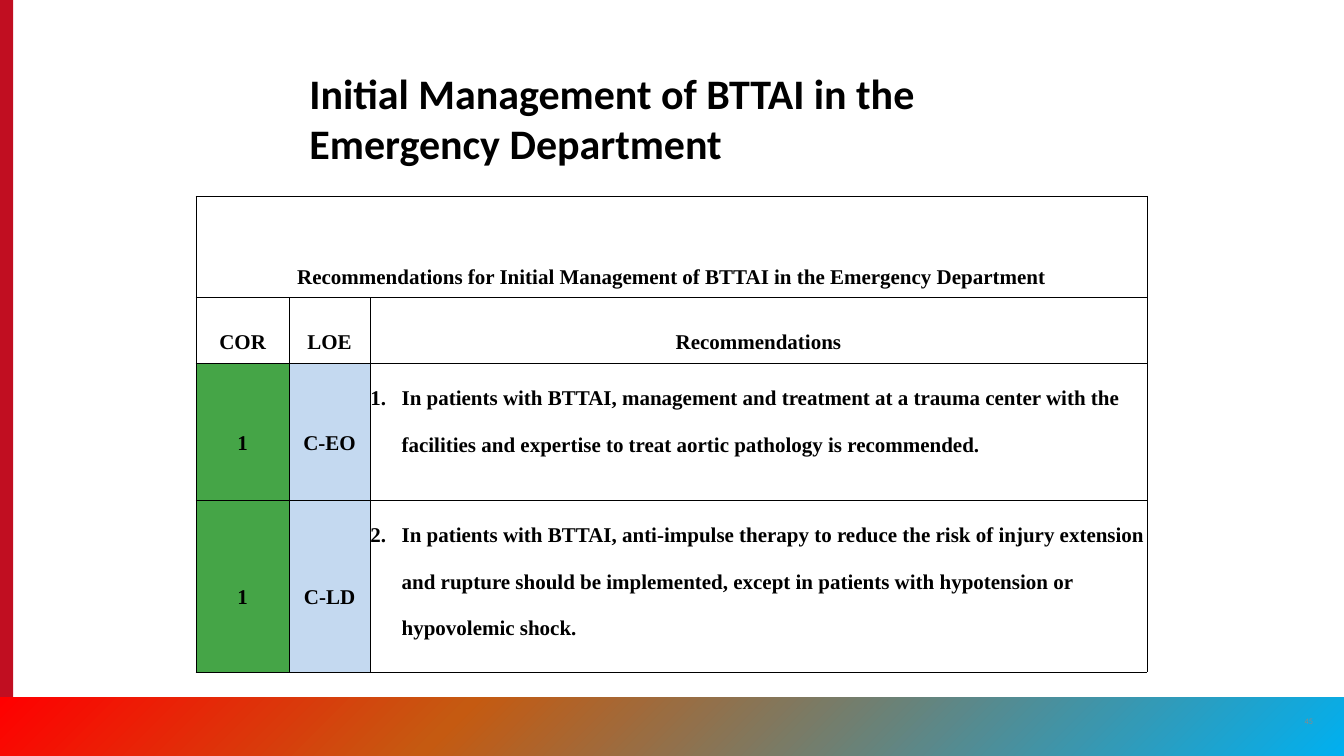
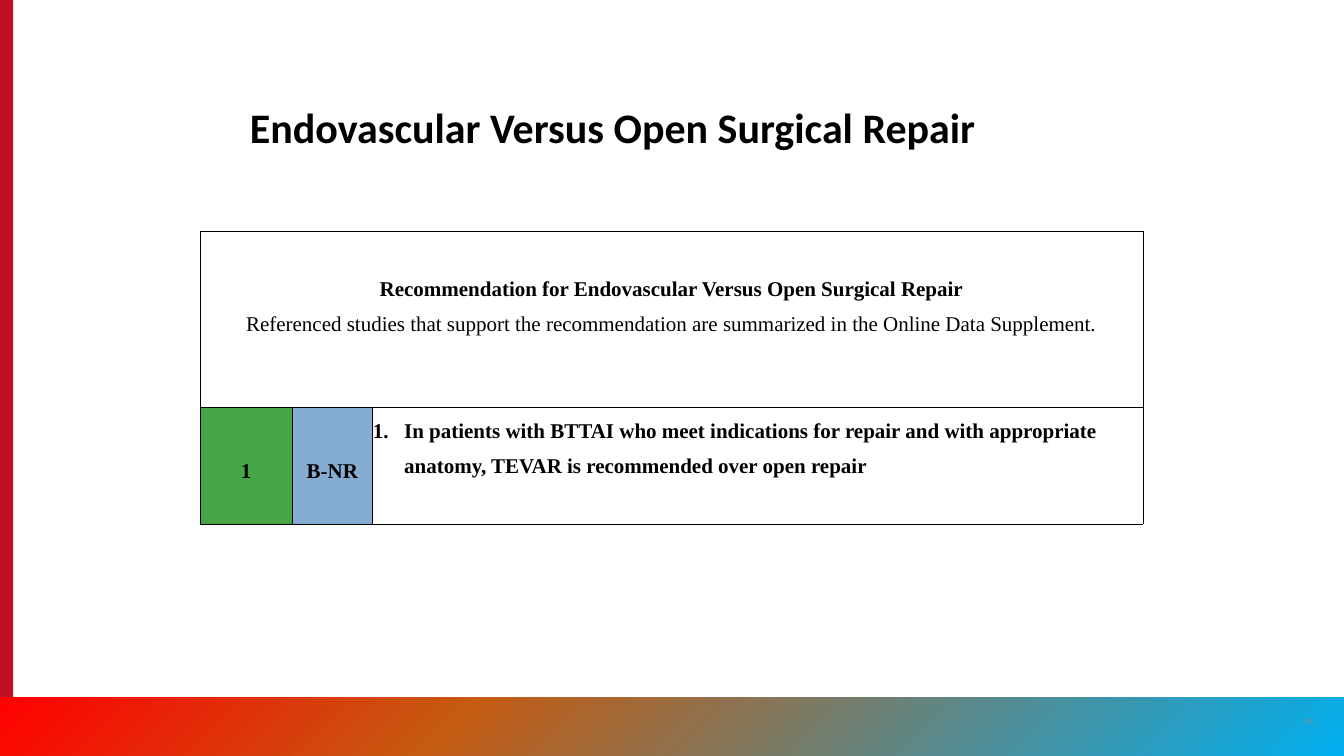
"""Build two clinical recommendation slides with a shared title, band and table style."""
from lxml.etree import SubElement
from copy import deepcopy
from pptx import Presentation
from pptx.dml.color import RGBColor
from pptx.enum.shapes import MSO_SHAPE as SHAPE
from pptx.enum.text import MSO_ANCHOR as ANCHOR, MSO_AUTO_SIZE as FIT, PP_ALIGN as ALIGN
from pptx.oxml.ns import qn
from pptx.util import Pt

PX = 9144
W, H = 2667, 1500
COLORS = {
    "black": "000000", "red": "C10E21", "gray": "8A8B8A",
    "sky": "00B0F0", "orange": "C55A11", "bright_red": "FF0000",
    "cor_1": "45A547", "loe_c": "C4D9F0", "loe_b": "85ADD1",
}
BAND_STOPS = [(0, "sky"), (0.66, "orange"), (1, "bright_red")]
HEAD_FONT, TABLE_FONT = "Calibri", "Times New Roman"


def px(*lengths):
    return [n * PX for n in lengths]


def rgb(name):
    return RGBColor.from_string(COLORS[name])


def style(p, size, font, color="black", bold=False, align=ALIGN.LEFT):
    p.alignment = align
    for r in p.runs:
        r.font.size, r.font.name, r.font.bold = Pt(size), font, bold
        r.font.color.rgb = rgb(color)


def add_bar(s, box):
    sp = s.shapes.add_shape(SHAPE.RECTANGLE, *px(*box))
    sp.shadow.inherit = False
    sp.line.fill.background()
    return sp


def add_text(s, box, text, wrap=True, anchor=ANCHOR.TOP):
    tf = s.shapes.add_textbox(*px(*box)).text_frame
    tf.margin_left = tf.margin_right = tf.margin_top = tf.margin_bottom = 8 * PX
    tf.word_wrap, tf.vertical_anchor = wrap, anchor
    tf.auto_size = FIT.SHAPE_TO_FIT_TEXT
    tf.text = text
    return tf.paragraphs[0]


def add_frame(s, number):
    side = add_bar(s, (0, 0, 26, H))
    side.fill.solid()
    side.fill.fore_color.rgb = rgb("red")

    band = add_bar(s, (0, H - 117, W, 117))
    band.rotation = 180
    band.fill.gradient()
    band.fill.gradient_angle = 315
    stop_list = band._element.spPr.find(".//" + qn("a:gsLst"))
    stop_list.append(deepcopy(stop_list[-1]))
    for stop, (position, color) in zip(band.fill.gradient_stops, BAND_STOPS):
        stop.position = position
        stop.color.rgb = rgb(color)

    p = add_text(s, (2579, 1412, 37, 36), number, False, ANCHOR.MIDDLE)
    style(p, 12, HEAD_FONT, "gray", align=ALIGN.CENTER)


def add_borders(cell):
    tcPr = cell._tc.get_or_add_tcPr()
    for side in "LRTB":
        ln = SubElement(tcPr, qn(f"a:ln{side}"), w=str(Pt(1)))
        fill = SubElement(ln, qn("a:solidFill"))
        SubElement(fill, qn("a:srgbClr"), val=COLORS["black"])


def fill_cell(cell, text, spacing, bold=True, align=ALIGN.CENTER):
    cell.text = text
    for i, p in enumerate(cell.text_frame.paragraphs):
        p.line_spacing = spacing
        style(p, 30, TABLE_FONT, bold=bold and i == 0, align=align)


def number_item(p, start):
    pPr = p._p.get_or_add_pPr()
    pPr.set("marL", str(62 * PX))
    pPr.set("indent", str(-62 * PX))
    SubElement(pPr, qn("a:buAutoNum"), type="arabicPeriod", startAt=str(start))


def add_recommendations(s, box, cols, rows, heading, labels, items, spacing, heading_top):
    tbl = s.shapes.add_table(len(rows), len(cols), *px(*box)).table
    tbl.first_row = tbl.horz_banding = False
    for col, width in zip(tbl.columns, cols):
        col.width = width * PX
    for row, height in zip(tbl.rows, rows):
        row.height = height * PX
    for cell in tbl.iter_cells():
        cell.margin_left = cell.margin_right = cell.margin_top = cell.margin_bottom = PX
        cell.vertical_anchor = ANCHOR.MIDDLE
        add_borders(cell)
        cell.fill.background()

    head = tbl.cell(0, 0)
    head.merge(tbl.cell(0, len(cols) - 1))
    head.vertical_anchor = ANCHOR.TOP
    head.margin_top = heading_top * PX
    fill_cell(head, heading, spacing)
    for c, label in enumerate(labels):
        fill_cell(tbl.cell(1, c), label, spacing)

    first = len(rows) - len(items)
    for i, (cor, loe, loe_color, advice) in enumerate(items):
        cells = [tbl.cell(first + i, c) for c in range(3)]
        for cell, text, color in zip(cells, (cor, loe), ("cor_1", loe_color)):
            fill_cell(cell, text, spacing)
            cell.fill.solid()
            cell.fill.fore_color.rgb = rgb(color)
        cells[2].vertical_anchor = ANCHOR.TOP
        cells[2].text = advice
        number_item(cells[2].text_frame.paragraphs[0], i + 1)
        p = cells[2].text_frame.paragraphs[0]
        p.line_spacing = spacing
        style(p, 30, TABLE_FONT, bold=True)


def add_slide(prs, number, title, title_box, **table):
    s = prs.slides.add_slide(prs.slide_layouts[6])
    add_frame(s, number)
    style(add_text(s, title_box, title), 60, HEAD_FONT, bold=True)
    add_recommendations(s, **table)


def main():
    prs = Presentation()
    prs.slide_width, prs.slide_height = px(W, H)
    add_slide(
        prs, "45", "Initial Management of BTTAI in the Emergency Department",
        (606, 125, 1455, 217),
        box=(389, 389, 1889, 946), cols=(185, 160, 1542), rows=(201, 131, 271, 341),
        heading="Recommendations for Initial Management of BTTAI in the Emergency Department",
        labels=("COR", "LOE", "Recommendations"),
        items=[
            ("1", "C-EO", "loe_c",
             "In patients with BTTAI, management and treatment at a trauma center with "
             "the facilities and expertise to treat aortic pathology is recommended."),
            ("1", "C-LD", "loe_c",
             "In patients with BTTAI, anti-impulse therapy to reduce the risk of injury "
             "extension and rupture should be implemented, except in patients with "
             "hypotension or hypovolemic shock."),
        ],
        spacing=2.0, heading_top=93)
    add_slide(
        prs, "49", "Endovascular Versus Open Surgical Repair",
        (488, 194, 1692, 217),
        box=(397, 458, 1872, 583), cols=(183, 159, 1529), rows=(351, 231),
        heading="Recommendation for Endovascular Versus Open Surgical Repair\n"
                "Referenced studies that support the recommendation are summarized "
                "in the Online Data Supplement.",
        labels=(),
        items=[
            ("1", "B-NR", "loe_b",
             "In patients with BTTAI who meet indications for repair and with appropriate "
             "anatomy, TEVAR is recommended over open repair"),
        ],
        spacing=1.5, heading_top=70)
    prs.save("out.pptx")


if __name__ == "__main__":
    main()
